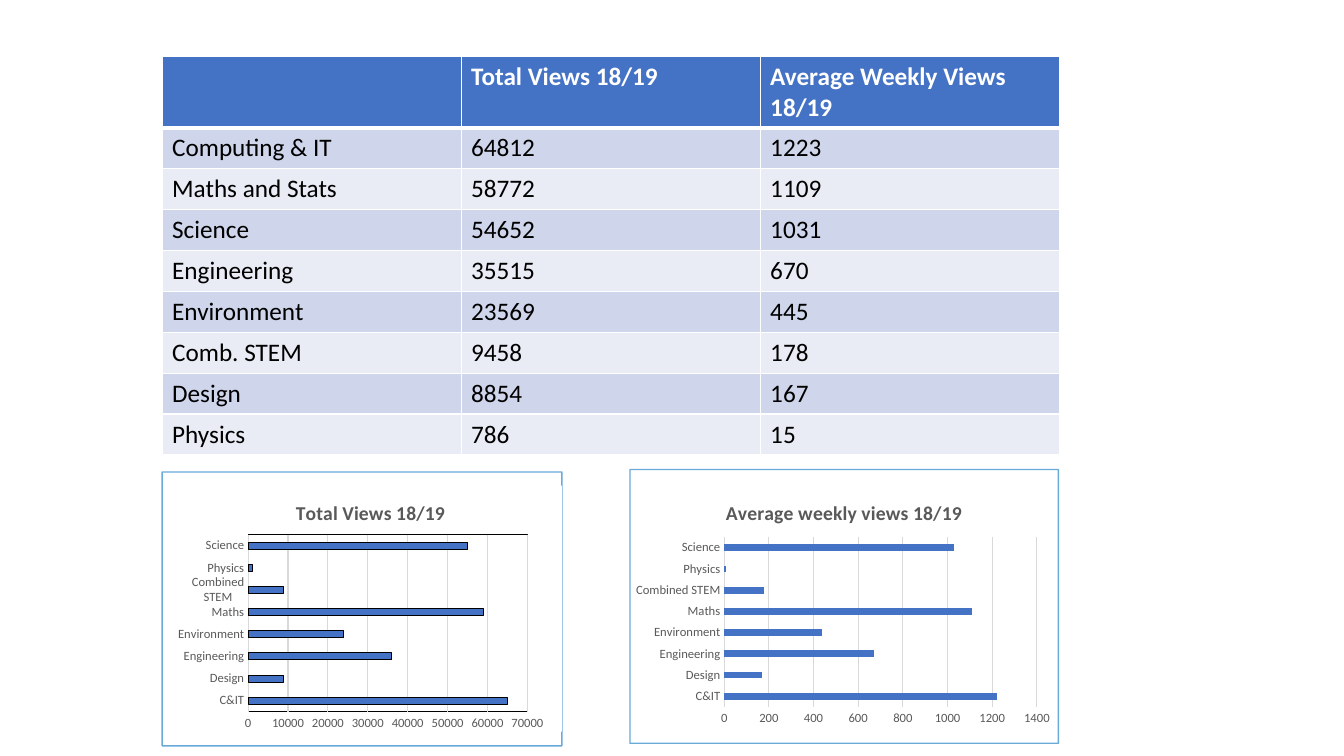
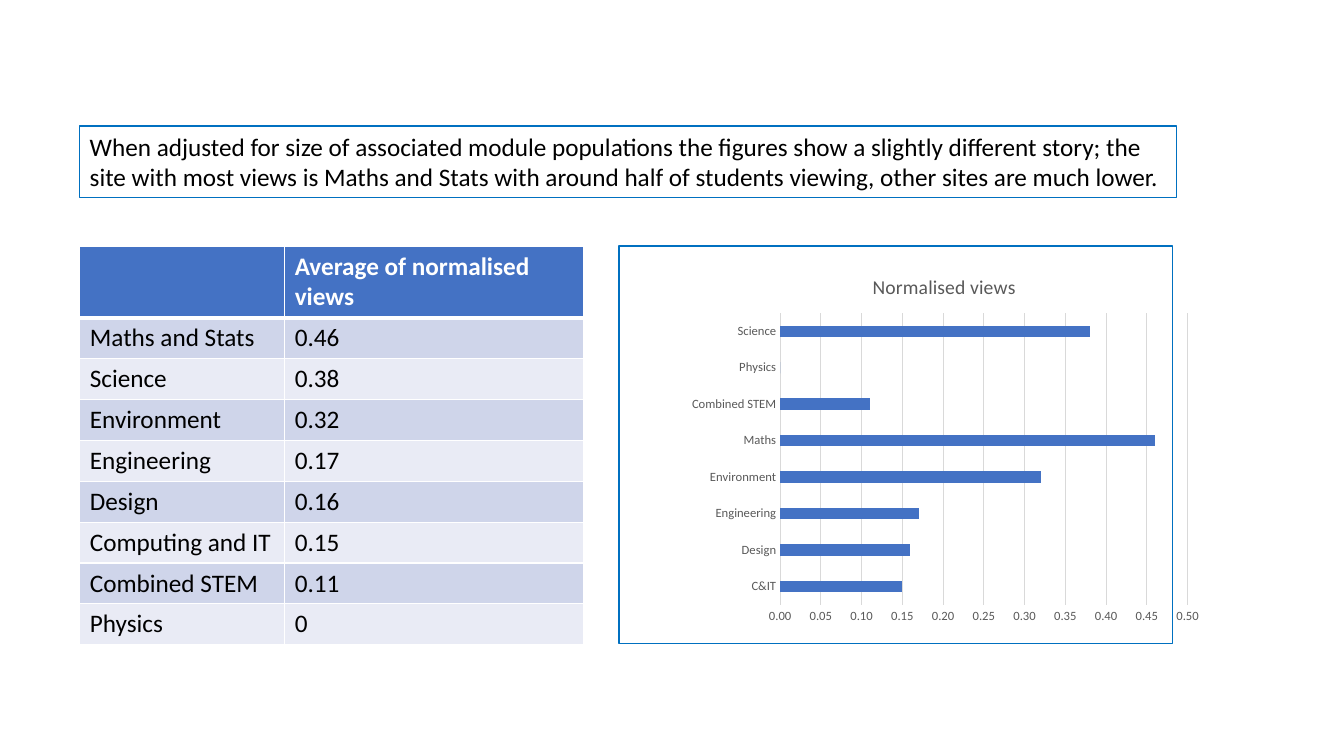
from dataclasses import dataclass

from pptx import Presentation
from pptx.chart.data import CategoryChartData
from pptx.dml.color import RGBColor
from pptx.enum.chart import XL_CHART_TYPE, XL_TICK_MARK
from pptx.enum.shapes import MSO_SHAPE
from pptx.oxml import parse_xml
from pptx.oxml.ns import nsdecls
from pptx.slide import Slide
from pptx.util import Inches, Pt

FONT = "Calibri"
BLUE, EDGE, WHITE, BLACK = "4472C4", "0070C0", "FFFFFF", "000000"
GREY, RULE = "595959", "D9D9D9"
BANDS = ("CFD5EA", "E9EBF5")
WIDE, HIGH = Inches(13.33), Inches(7.5)
COLS, ROWS = 16, 9
HEAD = 0.85

SITES = ("C&IT", "Design", "Engineering", "Environment", "Maths",
         "Combined STEM", "Physics", "Science")
VIEWS = (
    ("", "Total Views 18/19", "Average Weekly Views 18/19"),
    ("Computing & IT", "64812", "1223"),
    ("Maths and Stats", "58772", "1109"),
    ("Science", "54652", "1031"),
    ("Engineering", "35515", "670"),
    ("Environment", "23569", "445"),
    ("Comb. STEM", "9458", "178"),
    ("Design", "8854", "167"),
    ("Physics", "786", "15"),
)
SHARES = (
    ("", "Average of normalised views"),
    ("Maths and Stats", "0.46"),
    ("Science", "0.38"),
    ("Environment", "0.32"),
    ("Engineering", "0.17"),
    ("Design", "0.16"),
    ("Computing and IT", "0.15"),
    ("Combined STEM", "0.11"),
    ("Physics", "0"),
)
STORY = ("When adjusted for size of associated module populations the figures "
         "show a slightly different story; the site with most views is Maths "
         "and Stats with around half of students viewing, other sites are much "
         "lower.")


@dataclass(frozen=True)
class Box:
    left: float
    top: float
    wide: float
    high: float

    def place(self) -> tuple[int, int, int, int]:
        return (across(self.left), down(self.top),
                across(self.wide), down(self.high))


@dataclass(frozen=True)
class Graph:
    box: Box
    title: str
    vals: tuple[float, ...]
    top: float
    step: float
    form: str
    plot: Box
    bold: bool = True
    solid: bool = False


@dataclass(frozen=True)
class Grid:
    box: Box
    cols: tuple[float, ...]
    rows: tuple[tuple[str, ...], ...]


TOTAL = Graph(Box(2.12, 5.78, 4.57, 2.93), "Total Views 18/19",
              (65000, 9000, 36000, 24000, 59000, 9000, 1000, 55000),
              70000, 10000, "General", Box(0.18, 0.2, 0.73, 0.72), solid=True)
WEEKLY = Graph(Box(7.5, 5.78, 5.1, 2.93), "Average weekly views 18/19",
               (1220, 170, 670, 440, 1110, 180, 10, 1030),
               1400, 200, "0", Box(0.22, 0.21, 0.73, 0.69))
NORMAL = Graph(Box(8.09, 3.06, 6.3, 4.45), "Normalised views",
               (0.15, 0.16, 0.17, 0.32, 0.46, 0.11, 0, 0.38),
               0.5, 0.05, "0.00", Box(0.19, 0.15, 0.77, 0.78), bold=False)


def across(cols: float) -> int:
    return round(WIDE * cols / COLS)


def down(rows: float) -> int:
    return round(HIGH * rows / ROWS)


def hue(code: str) -> RGBColor:
    return RGBColor.from_string(code)


def style(font, size: float, code: str, bold: bool = False) -> None:
    font.name, font.size, font.bold = FONT, Pt(size), bold
    font.color.rgb = hue(code)


def write(frame, text: str, size: float, code: str, bold: bool = False) -> None:
    run = frame.paragraphs[0].add_run()
    run.text = text
    style(run.font, size, code, bold)


def stroke(line, code: str, width: float) -> None:
    line.color.rgb = hue(code)
    line.width = Pt(width)


def panel(slide: Slide, box: Box, alpha: int = 100) -> None:
    shape = slide.shapes.add_shape(MSO_SHAPE.RECTANGLE, *box.place())
    shape.shadow.inherit = False
    shape.fill.solid()
    shape.fill.fore_color.rgb = hue(WHITE)
    stroke(shape.line, EDGE, 1)
    if alpha < 100:
        tint = shape.element.xpath("./p:spPr/a:ln//a:srgbClr")[0]
        tint.append(parse_xml(
            f'<a:alpha {nsdecls("a")} val="{alpha * 1000}"/>'))


def border(cell, side: str, width: float) -> None:
    cell._tc.get_or_add_tcPr().append(parse_xml(
        f'<a:ln{side} {nsdecls("a")} w="{Pt(width)}"><a:solidFill>'
        f'<a:srgbClr val="{WHITE}"/></a:solidFill></a:ln{side}>'))


def table(slide: Slide, grid: Grid) -> None:
    count = len(grid.rows)
    frame = slide.shapes.add_table(count, len(grid.cols), *grid.box.place())
    body = (grid.box.high - HEAD) / (count - 1)
    for col, wide in zip(frame.table.columns, grid.cols):
        col.width = across(wide)
    for row, texts in enumerate(grid.rows):
        first = row == 0
        frame.table.rows[row].height = down(HEAD if first else body)
        for col, text in enumerate(texts):
            cell = frame.table.cell(row, col)
            for side in "LRTB":
                thick = (row, side) in ((0, "B"), (1, "T"))
                border(cell, side, 3 if thick else 1)
            cell.fill.solid()
            cell.fill.fore_color.rgb = hue(BLUE if first else BANDS[(row - 1) % 2])
            if text:
                write(cell.text_frame, text, 18, WHITE if first else BLACK, first)


def layout(area, plot: Box) -> None:
    for old in area.xpath("./c:layout"):
        area.remove(old)
    area.insert(0, parse_xml(
        f'<c:layout {nsdecls("c")}><c:manualLayout>'
        '<c:layoutTarget val="inner"/><c:xMode val="edge"/><c:yMode val="edge"/>'
        f'<c:x val="{plot.left}"/><c:y val="{plot.top}"/>'
        f'<c:w val="{plot.wide}"/><c:h val="{plot.high}"/>'
        '</c:manualLayout></c:layout>'))


def paint(fill: str, line: str):
    def ink(code: str) -> str:
        return (f'<a:solidFill><a:srgbClr val="{code}"/></a:solidFill>'
                if code else "<a:noFill/>")
    return parse_xml(f'<c:spPr {nsdecls("c", "a")}>{ink(fill)}'
                     f'<a:ln w="{Pt(0.75)}">{ink(line)}</a:ln></c:spPr>')


def draw(slide: Slide, graph: Graph) -> None:
    data = CategoryChartData()
    data.categories = SITES
    data.add_series("Series 1", graph.vals)
    chart = slide.shapes.add_chart(
        XL_CHART_TYPE.BAR_CLUSTERED, *graph.box.place(), data).chart
    style(chart.font, 10, BLACK)
    chart.has_legend = False
    chart.has_title = True
    write(chart.chart_title.text_frame, graph.title, 14, GREY, graph.bold)
    chart.chart_title.include_in_layout = False

    for axis in (chart.category_axis, chart.value_axis):
        axis.major_tick_mark = axis.minor_tick_mark = XL_TICK_MARK.NONE
        style(axis.tick_labels.font, 9, GREY)
    chart.category_axis.has_major_gridlines = False
    stroke(chart.category_axis.format.line, RULE, 0.75)
    scale = chart.value_axis
    scale.minimum_scale, scale.maximum_scale = 0, graph.top
    scale.major_unit = graph.step
    scale.has_major_gridlines = True
    stroke(scale.major_gridlines.format.line, RULE, 0.75)
    scale.format.line.fill.background()
    scale.tick_labels.number_format = graph.form
    scale.tick_labels.number_format_is_linked = False

    bars = chart.plots[0]
    bars.gap_width = 219
    bars.vary_by_categories = False
    look = bars.series[0].format
    look.fill.solid()
    look.fill.fore_color.rgb = hue(BLUE)
    if graph.solid:
        stroke(look.line, BLACK, 0.75)

    root = chart.element.xpath("./c:chart")[0]
    area = root.xpath("./c:plotArea")[0]
    layout(area, graph.plot)
    area.append(paint("", BLACK if graph.solid else ""))
    root.addnext(paint(WHITE if graph.solid else "", ""))


def note(slide: Slide, box: Box, text: str) -> None:
    shape = slide.shapes.add_textbox(*box.place())
    shape.text_frame.word_wrap = True
    stroke(shape.line, EDGE, 0.75)
    write(shape.text_frame, text, 18, BLACK)


def main() -> None:
    deck = Presentation()
    deck.slide_width, deck.slide_height = WIDE, HIGH
    blank = deck.slide_layouts[6]

    views = deck.slides.add_slide(blank)
    panel(views, Box(7.5, 5.59, 5.1, 3.26), 59)
    panel(views, Box(1.93, 5.62, 4.76, 3.26), 59)
    draw(views, TOTAL)
    table(views, Grid(Box(1.93, 0.67, 10.68, 4.73), (3.56,) * 3, VIEWS))
    draw(views, WEEKLY)

    shares = deck.slides.add_slide(blank)
    table(shares, Grid(Box(0.95, 2.93, 6, 4.73), (2.44, 3.56), SHARES))
    panel(shares, Box(7.37, 2.93, 6.59, 4.73))
    draw(shares, NORMAL)
    note(shares, Box(0.95, 1.5, 13.06, 0.85), STORY)

    deck.save("out.pptx")


if __name__ == "__main__":
    main()
